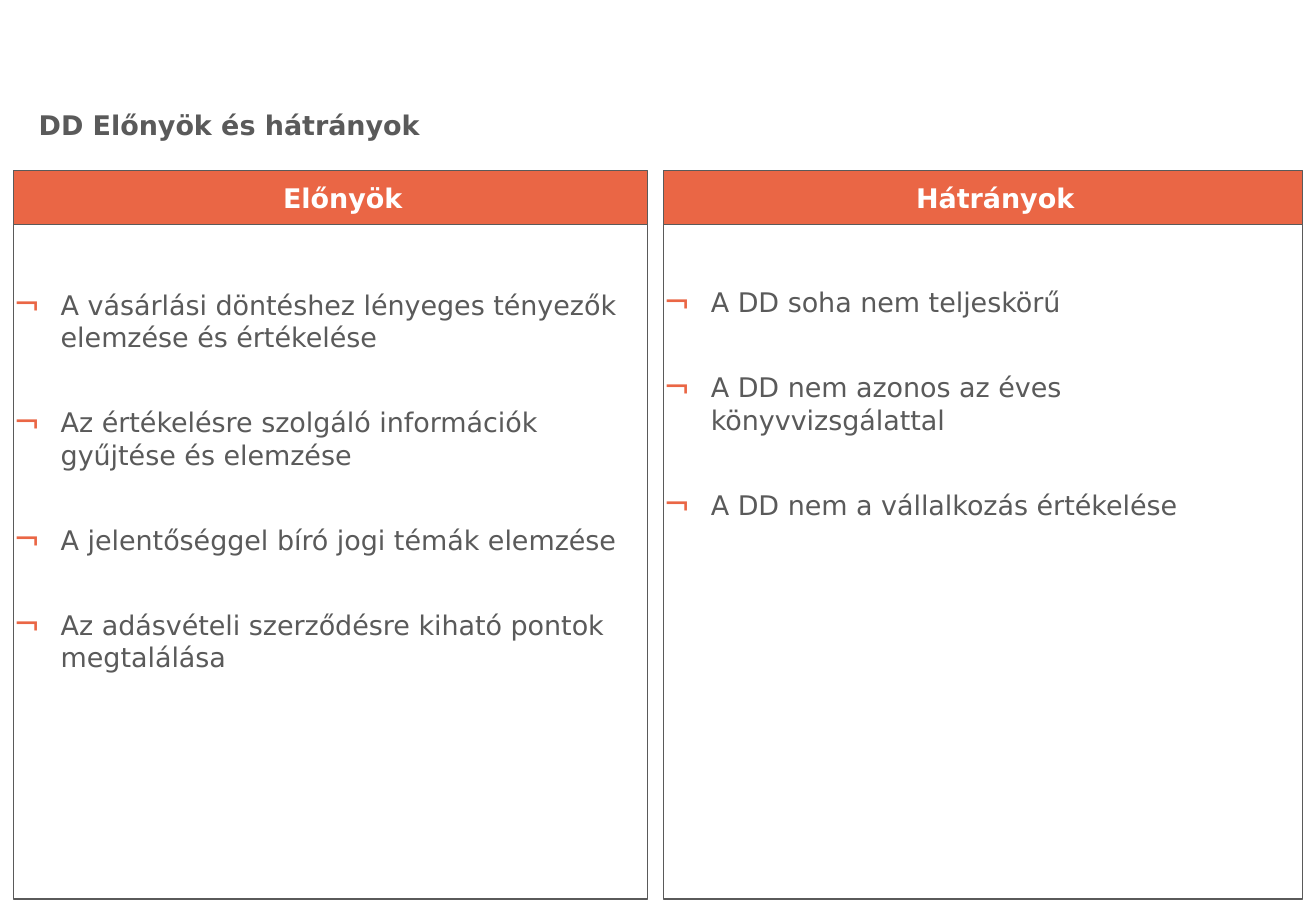
from lxml import etree
from pptx import Presentation
from pptx import util as u
from pptx.dml.color import RGBColor
from pptx.enum import shapes, text
from pptx.oxml import ns

GREY, ORANGE, WHITE = "5A5A5A", "EA6645", "FFFFFF"
HEADER_TOP, HEADER_HEIGHT, BODY_HEIGHT = 3.56, 1.14, 14.1


def color(value):
    return RGBColor.from_string(value)


class SlideBuilder:
    font = "DejaVu Sans"
    size = u.Pt(16)
    indent = u.Cm(0.99)
    bullet_gap = u.Pt(31.2)

    def __init__(self, slide):
        self.slide = slide

    def frame(self, box, left=0, top=0, anchor=text.MSO_ANCHOR.TOP):
        """Set wrapping, insets and anchor of a shape's text."""
        frame = box.text_frame
        frame.word_wrap = True
        frame.margin_left, frame.margin_top = u.Cm(left), u.Cm(top)
        frame.margin_right = frame.margin_bottom = 0
        frame.vertical_anchor = anchor
        return frame

    def add_words(self, para, words, fill=GREY, bold=False, align=text.PP_ALIGN.LEFT):
        para.alignment = align
        span = para.add_run()
        span.text = words
        span.font.name, span.font.size, span.font.bold = self.font, self.size, bold
        span.font.color.rgb = color(fill)

    def title(self, words, left, top, width, height):
        box = self.slide.shapes.add_textbox(*map(u.Cm, (left, top, width, height)))
        self.add_words(self.frame(box).paragraphs[0], words, bold=True)

    def panel(self, left, top, width, height, fill=None):
        box = self.slide.shapes.add_shape(
            shapes.MSO_SHAPE.RECTANGLE, *map(u.Cm, (left, top, width, height)))
        box.shadow.inherit = False
        if fill:
            box.fill.solid()
            box.fill.fore_color.rgb = color(fill)
        else:
            box.fill.background()
        box.line.color.rgb = color(GREY)
        box.line.width = u.Pt(0.75)
        return box

    def header(self, words, left, width):
        box = self.panel(left, HEADER_TOP, width, HEADER_HEIGHT, ORANGE)
        frame = self.frame(box, left=0.51, anchor=text.MSO_ANCHOR.MIDDLE)
        self.add_words(frame.paragraphs[0], words, WHITE, True, text.PP_ALIGN.CENTER)

    def bullet(self, para):
        props = para._p.get_or_add_pPr()
        props.set("marL", str(self.indent))
        props.set("indent", str(-self.indent))
        tint = etree.SubElement(props, ns.qn("a:buClr"))
        etree.SubElement(tint, ns.qn("a:srgbClr"), val=ORANGE)
        etree.SubElement(props, ns.qn("a:buSzPct"), val="120000")
        etree.SubElement(props, ns.qn("a:buFont"), typeface=self.font)
        etree.SubElement(props, ns.qn("a:buChar"), char="¬")

    def bullet_list(self, items, left, width, text_top):
        box = self.panel(left, HEADER_TOP + HEADER_HEIGHT, width, BODY_HEIGHT)
        frame = self.frame(box, top=text_top)
        for index, item in enumerate(items):
            para = frame.add_paragraph() if index else frame.paragraphs[0]
            self.bullet(para)
            if index:
                para.space_before = self.bullet_gap
            self.add_words(para, item)


COLUMNS = [
    ("Előnyök", 0.28, 13.26, 1.33, [
        "A vásárlási döntéshez lényeges tényezők elemzése és értékelése",
        "Az értékelésre szolgáló információk gyűjtése és elemzése",
        "A jelentőséggel bíró jogi témák elemzése",
        "Az adásvételi szerződésre kiható pontok megtalálása",
    ]),
    ("Hátrányok", 13.87, 13.36, 1.28, [
        "A DD soha nem teljeskörű",
        "A DD nem azonos az éves könyvvizsgálattal",
        "A DD nem a vállalkozás értékelése",
    ]),
]


def main():
    deck = Presentation()
    deck.slide_width, deck.slide_height = u.Cm(27.51), u.Cm(19.05)
    page = SlideBuilder(deck.slides.add_slide(deck.slide_layouts[6]))
    page.title("DD Előnyök és hátrányok", 0.81, 2.26, 25.48, 1.3)
    for heading, left, width, text_top, items in COLUMNS:
        page.bullet_list(items, left, width, text_top)
        page.header(heading, left, width)
    deck.save("out.pptx")


if __name__ == "__main__":
    main()
